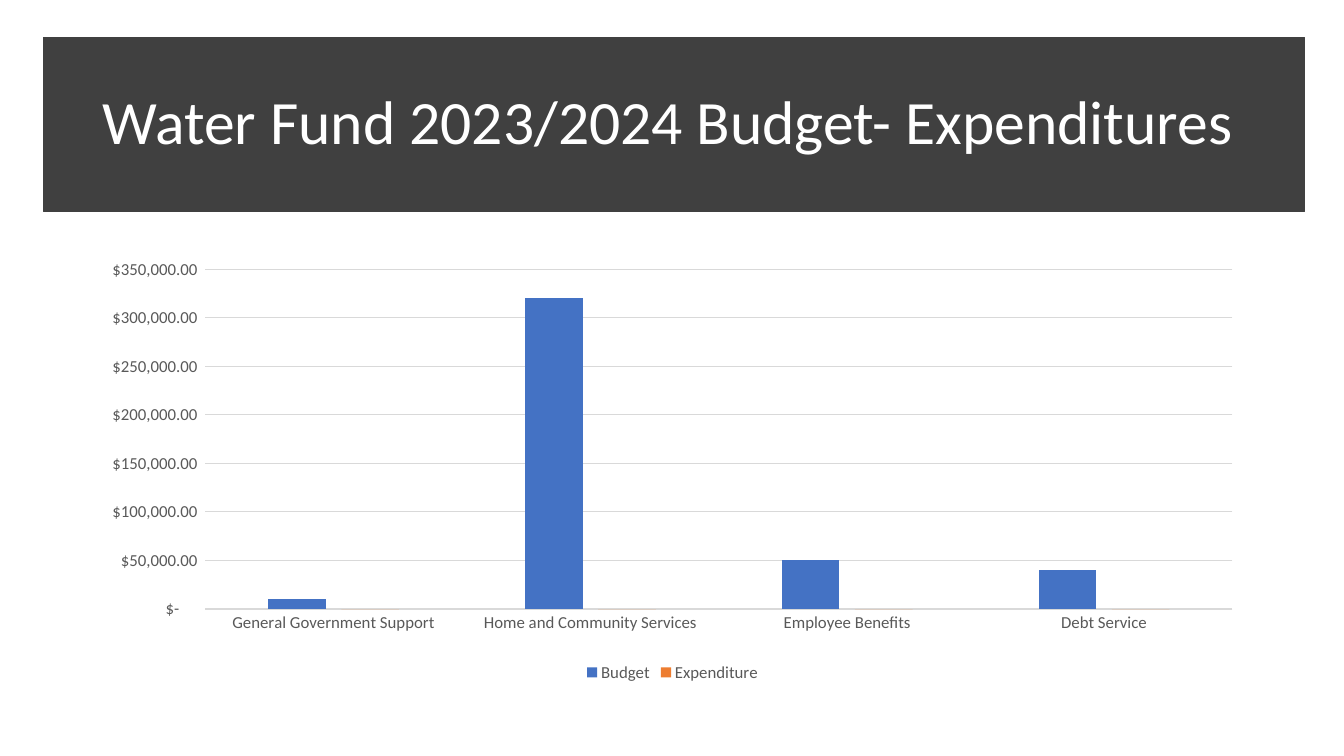
"""Build the water fund expenditures slide."""
from lxml import etree
from pptx import Presentation
from pptx.chart.data import CategoryChartData
from pptx.dml.color import RGBColor
from pptx.enum import chart as charts, shapes, text
from pptx.oxml.ns import qn
from pptx.util import Inches, Pt

FONT = "Calibri"
CURRENCY = '_($* #,##0.00_);_($* (#,##0.00);_($* "-"??_);_(@_)'
CATEGORIES = ["General Government Support", "Home and Community Services",
              "Employee Benefits", "Debt Service"]
SERIES = [("Budget", [10000, 320000, 50000, 40000], "4472C4"),
          ("Expenditure", [0, 0, 0, 0], "ED7D31")]


def color(value):
    """Return the colour for a hex string."""
    return RGBColor.from_string(value)


def set_font(font, size, value):
    """Set the typeface, size and colour of a font."""
    font.name = FONT
    font.size = Pt(size)
    font.color.rgb = color(value)


def set_line(line, value):
    """Draw a thin line in one colour."""
    line.color.rgb = color(value)
    line.width = Pt(0.75)


def add_banner(page, left, top, width, height, value):
    """Add a filled rectangle behind the title."""
    banner = page.shapes.add_shape(
        shapes.MSO_SHAPE.RECTANGLE,
        Inches(left), Inches(top), Inches(width), Inches(height))
    banner.shadow.inherit = False
    banner.fill.solid()
    banner.fill.fore_color.rgb = color(value)
    banner.line.color.rgb = color(value)
    banner.line.width = Pt(10)
    banner.line.width = Pt(1)


def add_title(page, left, top, width, height, words):
    """Add the title text, vertically centred."""
    box = page.shapes.add_textbox(
        Inches(left), Inches(top), Inches(width), Inches(height))
    frame = box.text_frame
    frame.word_wrap = True
    frame.vertical_anchor = text.MSO_ANCHOR.MIDDLE
    para = frame.paragraphs[0]
    para.text = words
    para.line_spacing = 0.9
    set_font(para.font, 44, "FFFFFF")


def place_plot(chart, x, y, w, h):
    """Fix the inner plot area as fractions of the chart."""
    area = chart.plots[0]._element.getparent()
    for old in area.findall(qn("c:layout")):
        area.remove(old)
    layout = etree.Element(qn("c:layout"))
    area.insert(0, layout)
    manual = etree.SubElement(layout, qn("c:manualLayout"))
    settings = [("layoutTarget", "inner"), ("xMode", "edge"), ("yMode", "edge"),
                ("x", x), ("y", y), ("w", w), ("h", h)]
    for name, value in settings:
        etree.SubElement(manual, qn(f"c:{name}")).set("val", str(value))


def style_axes(chart):
    """Style both axes and the horizontal gridlines."""
    for axis in (chart.category_axis, chart.value_axis):
        axis.major_tick_mark = charts.XL_TICK_MARK.NONE
        axis.minor_tick_mark = charts.XL_TICK_MARK.NONE
        set_font(axis.tick_labels.font, 12, "595959")
    set_line(chart.category_axis.format.line, "D9D9D9")
    values = chart.value_axis
    values.format.line.fill.background()
    set_line(values.major_gridlines.format.line, "D9D9D9")
    values.minimum_scale = 0
    values.maximum_scale = 350000
    values.major_unit = 50000
    values.tick_labels.number_format = CURRENCY
    values.tick_labels.number_format_is_linked = False


def add_budget_chart(page, left, top, width, height):
    """Add the clustered columns of budget and expenditure."""
    data = CategoryChartData(number_format=CURRENCY)
    data.categories = CATEGORIES
    for name, values, _ in SERIES:
        data.add_series(name, values)
    chart = page.shapes.add_chart(
        charts.XL_CHART_TYPE.COLUMN_CLUSTERED,
        Inches(left), Inches(top), Inches(width), Inches(height), data).chart
    set_font(chart.font, 10, "000000")
    chart.has_title = False
    chart.has_legend = True
    chart.legend.position = charts.XL_LEGEND_POSITION.BOTTOM
    chart.legend.include_in_layout = False
    set_font(chart.legend.font, 12, "595959")
    plot = chart.plots[0]
    plot.vary_by_categories = False
    plot.gap_width = 219
    plot.overlap = -27
    for series, (_, _, value) in zip(plot.series, SERIES):
        series.format.fill.solid()
        series.format.fill.fore_color.rgb = color(value)
    style_axes(chart)
    place_plot(chart, 0.097, 0.04, 0.886, 0.782)


def main():
    """Build and save the deck."""
    deck = Presentation()
    deck.slide_width = Inches(13.33)
    deck.slide_height = Inches(7.5)
    page = deck.slides.add_slide(deck.slide_layouts[6])
    add_banner(page, 0.43, 0.37, 12.51, 1.73, "404040")
    add_title(page, 0.92, 0.51, 11.5, 1.45,
              "Water Fund 2023/2024 Budget- Expenditures")
    add_budget_chart(page, 0.92, 2.5, 11.5, 4.31)
    deck.save("out.pptx")


if __name__ == "__main__":
    main()
